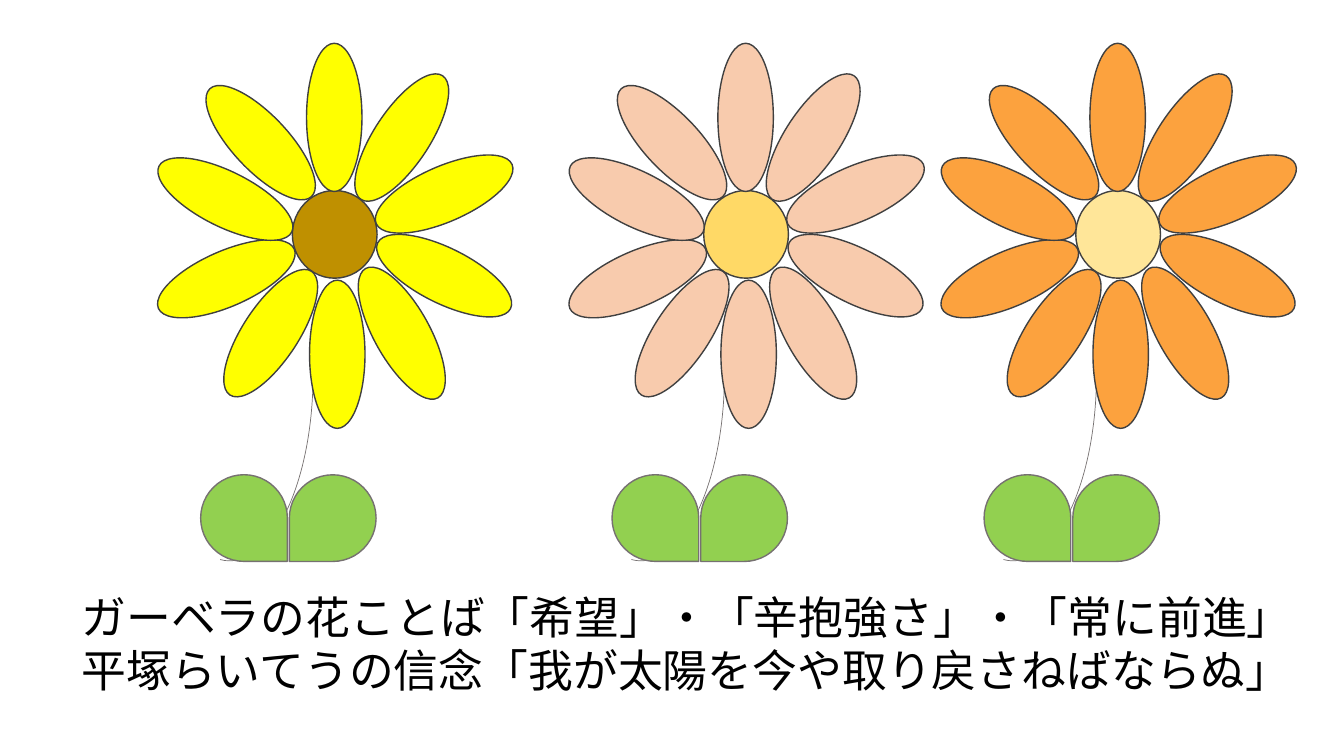
"""Builds a slide with three gerberas above two lines about their meaning."""
import pptx
import pptx.dml.color
import pptx.enum.shapes
import pptx.util
from lxml import etree

FONT = "Noto Sans CJK JP"
MESSAGES = [
    "ガーベラの花ことば「希望」・「辛抱強さ」・「常に前進」",
    "平塚らいてうの信念「我が太陽を今や取り戻さねばならぬ」",
]
COLOURS = {
    "yellow": "FFFF00", "brown": "BF9000", "peach": "F8CBAD", "gold": "FFD966",
    "orange": "FCA23E", "cream": "FFE699", "leaf": "92D050",
    "outline": "404040", "stem": "767171", "text": "000000",
}
FLOWERS = [(1.96, "yellow", "brown"), (6.04, "peach", "gold"), (9.73, "orange", "cream")]
PETAL_SIZE = (0.55, 1.47)
PETALS = [
    (1.08, 0.43, 0), (1.75, 0.63, 33.4), (2.17, 1.19, 66.4), (2.17, 2, 116.4),
    (1.75, 2.57, 150.8), (1.11, 2.78, 0), (0.45, 2.57, 33.4), (0.01, 2.03, 66.4),
    (0, 1.24, 116.4), (0.35, 0.68, 136.7),
]
LEAVES = [(0.03, 4.71, 90), (0.91, 4.71, 180)]
LEAF_SIZE = (0.86, 0.86)
KINDS = pptx.enum.shapes.MSO_SHAPE


def colour(name):
    return pptx.dml.color.RGBColor.from_string(COLOURS[name])


def add_part(page, kind, place, size, turn, fill, line, weight=1):
    box = [pptx.util.Inches(length) for length in (*place, *size)]
    part = page.shapes.add_shape(kind, *box)
    part.rotation = turn
    part.shadow.inherit = False
    if fill:
        part.fill.solid()
        part.fill.fore_color.rgb = colour(fill)
    else:
        part.fill.background()
    part.line.color.rgb = colour(line)
    part.line.width = pptx.util.Pt(weight)
    return part


def add_flower(page, left, petal_colour, hub_colour):
    stem = add_part(page, KINDS.ARC, (left - 1.53, 2.89), (3.7, 1.65), 90, None, "stem", 0.5)
    stem.adjustments[0] = 162
    stem.adjustments[1] = 1.819
    add_part(page, KINDS.OVAL, (left + 0.94, 1.89), (0.84, 0.87), 0, hub_colour, "outline")
    for across, top, turn in PETALS:
        add_part(page, KINDS.OVAL, (left + across, top), PETAL_SIZE, turn, petal_colour, "outline")
    for across, top, turn in LEAVES:
        add_part(page, KINDS.TEAR, (left + across, top), LEAF_SIZE, turn, "leaf", "stem")


def add_messages(page):
    box = page.shapes.add_textbox(*[pptx.util.Inches(length) for length in (0.71, 5.86, 12.43, 1.29)])
    frame = box.text_frame
    frame.word_wrap = True
    for index, message in enumerate(MESSAGES):
        para = frame.add_paragraph() if index else frame.paragraphs[0]
        para.line_spacing = 0.9
        para.space_before = pptx.util.Pt(3.2)
        span = para.add_run()
        span.text = message
        span.font.size = pptx.util.Pt(32)
        span.font.name = FONT
        span.font.color.rgb = colour("text")
        properties = span.font._element
        latin = properties.find(pptx.oxml.ns.qn("a:latin"))
        east_asian = etree.Element(pptx.oxml.ns.qn("a:ea"), typeface=FONT)
        latin.addnext(east_asian)


def main():
    deck = pptx.Presentation()
    deck.slide_width = pptx.util.Inches(13.33)
    deck.slide_height = pptx.util.Inches(7.5)
    page = deck.slides.add_slide(deck.slide_layouts[6])
    for flower in FLOWERS:
        add_flower(page, *flower)
    add_messages(page)
    deck.save("out.pptx")


if __name__ == "__main__":
    main()
